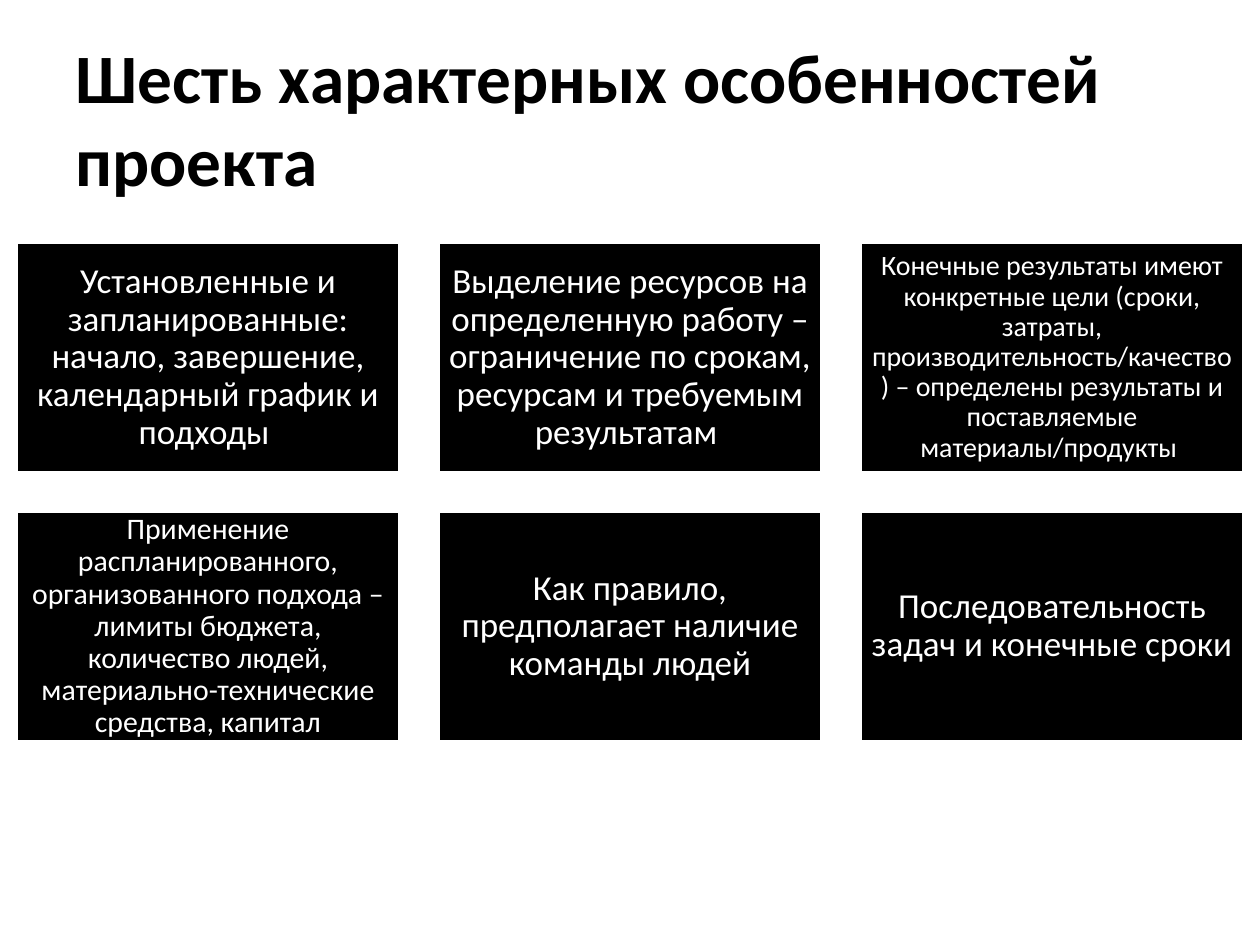
"""Builds a slide listing six characteristic features of a project."""
from pptx import Presentation
from pptx.dml.color import RGBColor
from pptx.enum.shapes import MSO_SHAPE
from pptx.enum.text import MSO_ANCHOR, MSO_AUTO_SIZE, PP_ALIGN
from pptx.util import Emu, Pt

TITLE = "Шесть характерных особенностей проекта"
CARDS = [
    ("Установленные и запланированные: начало, завершение, календарный график и подходы ", 20),
    ("Выделение ресурсов на определенную работу – ограничение по срокам, "
     "ресурсам и требуемым результатам ", 20),
    ("Конечные результаты имеют конкретные цели (сроки, затраты, "
     "производительность/качество) – определены результаты и "
     "поставляемые материалы/продукты ", 16),
    ("Применение распланированного, организованного подхода – лимиты бюджета, "
     "количество людей, материально-технические средства, капитал", 17),
    ("Как правило, предполагает наличие команды людей", 20),
    ("Последовательность задач и конечные сроки", 20),
]
FONT, BLACK, WHITE = "Calibri", "000000", "FFFFFF"
COLS, LEFT, TOP, CARD_W, CARD_H, GAP = 3, 16, 242, 384, 231, 38


def px(n):
    return Emu(round(n * 914400 / 126))


def rgb(value):
    return RGBColor.from_string(value)


def place(sp, x, y, w, h):
    sp.left, sp.top, sp.width, sp.height = px(x), px(y), px(w), px(h)


def write(sp, text, size, color, align, bold=False):
    tf = sp.text_frame
    tf.word_wrap = True
    tf.auto_size = MSO_AUTO_SIZE.NONE
    tf.vertical_anchor = MSO_ANCHOR.MIDDLE
    p = tf.paragraphs[0]
    p.alignment = align
    r = p.add_run()
    r.text = text
    r.font.name, r.font.size, r.font.bold = FONT, Pt(size), bold
    r.font.color.rgb = rgb(color)
    return tf


def add_card(s, i, text, size):
    row, col = divmod(i, COLS)
    x, y = LEFT + col * (CARD_W + GAP), TOP + row * (CARD_H + GAP)
    sp = s.shapes.add_shape(MSO_SHAPE.RECTANGLE, px(x), px(y), px(CARD_W), px(CARD_H))
    sp.shadow.inherit = False
    sp.fill.solid()
    sp.fill.fore_color.rgb = rgb(BLACK)
    sp.line.color.rgb = rgb(WHITE)
    sp.line.width = Pt(2)
    tf = write(sp, text, size, WHITE, PP_ALIGN.CENTER)
    tf.paragraphs[0].line_spacing = 0.9
    inset = px(10 if size == 20 else 9)
    tf.margin_left = tf.margin_right = tf.margin_top = tf.margin_bottom = inset


def main():
    prs = Presentation()
    prs.slide_width, prs.slide_height = px(1260), px(945)
    s = prs.slides.add_slide(prs.slide_layouts[5])
    place(s.shapes.title, 63, 38, 1134, 158)
    write(s.shapes.title, TITLE, 39.6, BLACK, PP_ALIGN.LEFT, bold=True)
    for i, (text, size) in enumerate(CARDS):
        add_card(s, i, text, size)
    prs.save("out.pptx")


if __name__ == "__main__":
    main()
